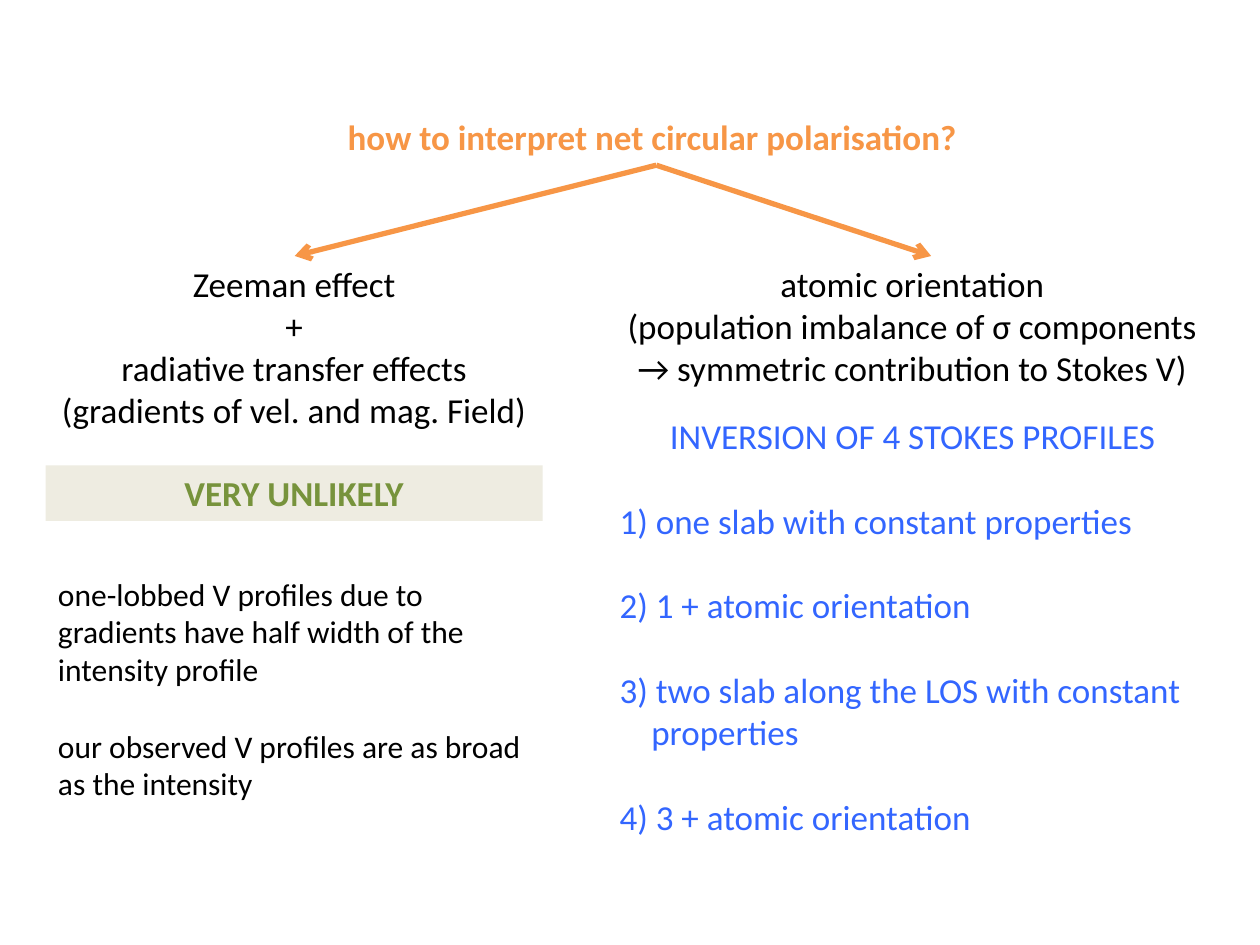
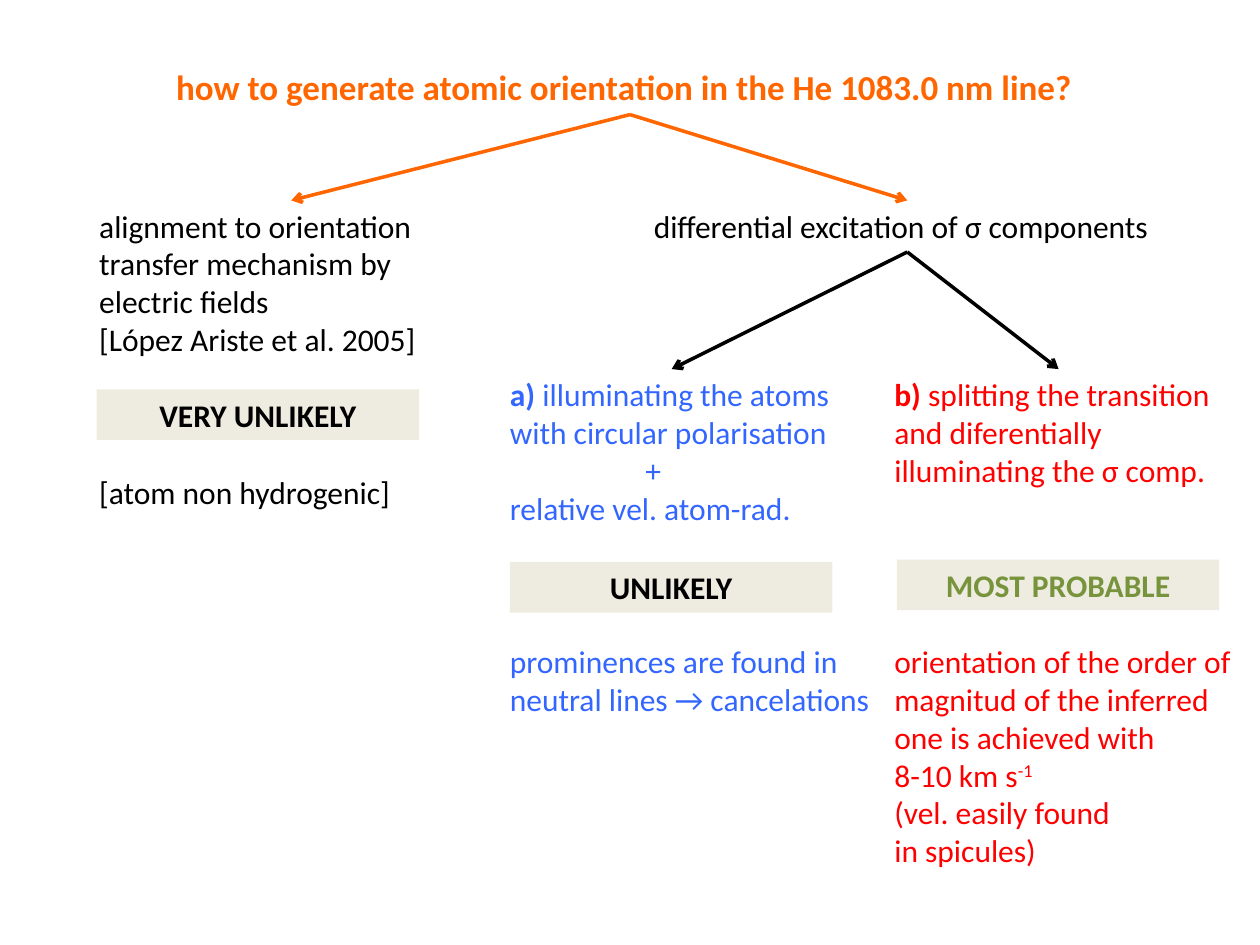
from dataclasses import dataclass
from pptx import Presentation
from pptx.dml.color import RGBColor
from pptx.enum.shapes import MSO_CONNECTOR
from pptx.enum.text import MSO_ANCHOR, MSO_AUTO_SIZE, PP_ALIGN
from pptx.oxml.ns import qn
from pptx.util import Cm, Pt
from lxml.etree import SubElement

BLACK = RGBColor(0x00, 0x00, 0x00)
WHITE = RGBColor(0xFF, 0xFF, 0xFF)
SOFT_ORANGE = RGBColor(0xF7, 0x96, 0x46)
ORANGE = RGBColor(0xFF, 0x66, 0x00)
BLUE = RGBColor(0x33, 0x66, 0xFF)
RED = RGBColor(0xFF, 0x00, 0x00)
GREEN = RGBColor(0x77, 0x93, 0x3C)
BEIGE = RGBColor(0xEE, 0xEC, 0xE1)
FONT = "Calibri"
LINE_HEIGHT = 1.22


@dataclass
class Para:
    """A paragraph: (text, style) runs, blank lines above, indents in cm."""
    runs: list
    gap: int = 0
    margin: float = 0
    hanging: float = 0
    align: PP_ALIGN = None


def para(text, **layout):
    return Para([(text, "")], **layout)


def add_text(s, box, paras, size=18, color=BLACK, bold=False,
             align=PP_ALIGN.LEFT, wrap=False, fill=None):
    sp = s.shapes.add_textbox(*(Cm(v) for v in box))
    if fill is not None:
        sp.fill.solid()
        sp.fill.fore_color.rgb = fill
    tf = sp.text_frame
    tf.word_wrap = wrap
    tf.auto_size = MSO_AUTO_SIZE.SHAPE_TO_FIT_TEXT
    tf.vertical_anchor = MSO_ANCHOR.TOP
    for i, item in enumerate(paras):
        item = para(item) if isinstance(item, str) else item
        p = tf.paragraphs[0] if i == 0 else tf.add_paragraph()
        p.alignment = align if item.align is None else item.align
        if item.gap:
            p.space_before = Pt(round(item.gap * size * LINE_HEIGHT, 1))
        if item.margin:
            pPr = p._p.get_or_add_pPr()
            pPr.set("marL", str(Cm(item.margin)))
            pPr.set("indent", str(-Cm(item.hanging)))
        for text, style in item.runs:
            r = p.add_run()
            r.text = text
            r.font.name = FONT
            r.font.size = Pt(size)
            r.font.bold = bold or style == "bold"
            r.font.color.rgb = color
            if style == "super":
                r._r.get_or_add_rPr().set("baseline", "30000")


def add_title(s, box, text, color):
    add_text(s, box, [text], size=20, color=color, bold=True, fill=WHITE)


def add_verdict(s, box, text, color=BLACK, size=18):
    add_text(s, box, [text], size=size, color=color, bold=True,
             align=PP_ALIGN.CENTER, wrap=True, fill=BEIGE)


def add_fork(s, start, ends, color, width):
    """Arrows from one point to each of the ends."""
    for end in ends:
        line = s.shapes.add_connector(MSO_CONNECTOR.STRAIGHT,
                                      *(Cm(v) for v in start + end))
        line.line.color.rgb = color
        line.line.width = Pt(width)
        SubElement(line.line._get_or_add_ln(), qn("a:tailEnd"), type="arrow")
        SubElement(line._element.spPr, qn("a:effectLst"))


def zeeman_column(s, x, y, w):
    add_text(s, (x, y, w, 4.52),
             ["Zeeman effect", "+", "radiative transfer effects",
              "(gradients of vel. and mag. Field)"],
             size=20, align=PP_ALIGN.CENTER)
    add_verdict(s, (x, y + 4.22, w, 1.12), "VERY UNLIKELY", GREEN, size=20)
    add_text(s, (x, y + 6.3, w, 4.88),
             ["one-lobbed V profiles due to gradients have half width of "
              "the intensity profile",
              para("our observed V profiles are as broad as the intensity",
                   gap=1)],
             wrap=True)


def orientation_column(s, x, y, w):
    add_text(s, (x + 0.1, y, w - 0.22, 2.82),
             ["atomic orientation", "(population imbalance of σ components",
              "→ symmetric contribution to Stokes V)"],
             size=20, align=PP_ALIGN.CENTER)
    models = ["1) one slab with constant properties",
              "2) 1 + atomic orientation",
              "3) two slab along the LOS with constant properties",
              "4) 3 + atomic orientation"]
    add_text(s, (x, y + 3.07, w, 8.81),
             [para("INVERSION OF 4 STOKES PROFILES", align=PP_ALIGN.CENTER)]
             + [para(m, gap=1, margin=0.64, hanging=0.64) for m in models],
             size=20, color=BLUE, wrap=True)


def alignment_branch(s, x, y, w):
    add_text(s, (x, y, w, 6.4),
             ["alignment to orientation transfer mechanism by electric fields",
              "[López Ariste et al. 2005]",
              para("[atom non hydrogenic]", gap=3)], wrap=True)
    add_verdict(s, (x + 0.2, y + 3.81, 6.5, 1.02), "VERY UNLIKELY")


def illumination_branch(s, x, y, w):
    add_text(s, (x, y, w, 7.19),
             [Para([("a) ", "bold"), ("illuminating the atoms", "")]),
              "with circular polarisation",
              para("+", margin=2.73),
              "relative vel. atom-rad.",
              para("prominences are found in", gap=3),
              "neutral lines → cancelations"], color=BLUE)
    add_verdict(s, (x + 0.25, y + 3.89, 6.5, 1.02), "UNLIKELY")


def splitting_branch(s, x, y, w):
    add_text(s, (x, y, w, 10.26),
             [Para([("b)", "bold"), (" splitting the transition", "")]),
              "and diferentially", "illuminating the σ comp.",
              para("orientation of the order of", gap=4),
              "magnitud of the inferred", "one is achieved with",
              Para([("8-10 km s", ""), ("-1", "super")]),
              "(vel. easily found", "in spicules)"], color=RED)
    add_verdict(s, (x + 0.3, y + 3.84, 6.5, 1.02), "MOST PROBABLE", GREEN)


def interpretation_slide(s):
    add_title(s, (6.76, 2.21, 12.95, 1.12),
              "how to interpret net circular polarisation?", SOFT_ORANGE)
    add_fork(s, (13.23, 3.33), [(5.94, 5.16), (18.77, 5.16)], SOFT_ORANGE, 3)
    zeeman_column(s, 0.92, 5.16, 10.02)
    orientation_column(s, 12.24, 5.16, 12.32)


def generation_slide(s):
    add_title(s, (3.3, 1.19, 18.8, 1.12),
              "how to generate atomic orientation in the He 1083.0 nm line?",
              ORANGE)
    add_fork(s, (12.7, 2.31), [(5.87, 4.04), (18.29, 4.04)], ORANGE, 2)
    alignment_branch(s, 1.75, 4.04, 8.26)
    add_text(s, (12.93, 4.04, 10.72, 1.02),
             ["differential excitation of σ components"])
    add_fork(s, (18.29, 5.08), [(13.54, 7.44), (21.34, 7.44)], BLACK, 2)
    illumination_branch(s, 10.03, 7.44, 7.98)
    splitting_branch(s, 17.78, 7.44, 7.42)


def main():
    prs = Presentation()
    prs.slide_width, prs.slide_height = Cm(25.4), Cm(19.05)
    for build in (interpretation_slide, generation_slide):
        build(prs.slides.add_slide(prs.slide_layouts[6]))
    prs.save("out.pptx")


if __name__ == "__main__":
    main()
